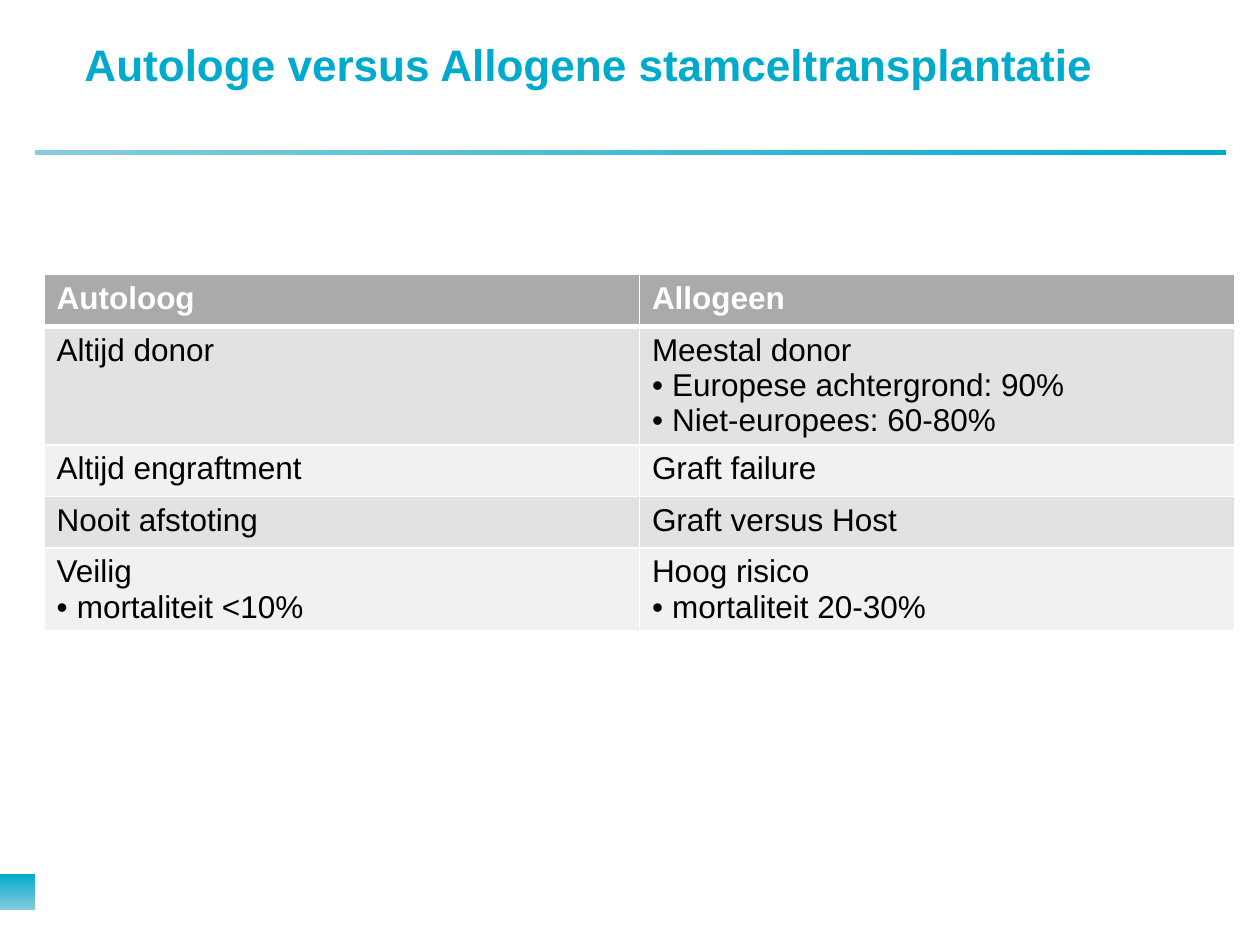
from lxml import etree
from pptx import Presentation
from pptx.dml.color import RGBColor
from pptx.enum import shapes, text
from pptx.oxml import ns
from pptx.util import Inches, Pt

CYAN = RGBColor(0x00, 0xAA, 0xCC)
PALE_CYAN = RGBColor(0x88, 0xCC, 0xDD)
WHITE = RGBColor(0xFF, 0xFF, 0xFF)
BLACK = RGBColor(0x00, 0x00, 0x00)
HEADER_GREY = RGBColor(0xAA, 0xAA, 0xAA)
BAND_GREYS = (RGBColor(0xF1, 0xF1, 0xF1), RGBColor(0xE2, 0xE2, 0xE2))

ROWS = [
    (["Autoloog"], ["Allogeen"]),
    (["Altijd donor"],
     ["Meestal donor", "Europese achtergrond: 90%", "Niet-europees: 60-80%"]),
    (["Altijd engraftment"], ["Graft failure"]),
    (["Nooit afstoting"], ["Graft versus Host"]),
    (["Veilig", "mortaliteit <10%"], ["Hoog risico", "mortaliteit 20-30%"]),
]
ROW_HEIGHTS = [0.41, 0.93, 0.41, 0.41, 0.65]


class SlideBuilder:
    font_name = "Arial"
    title_size = Pt(25.2)
    body_size = Pt(18)

    def __init__(self, page):
        self.page = page

    def style(self, para, size, color, bold):
        for span in para.runs:
            span.font.name = self.font_name
            span.font.size = size
            span.font.bold = bold
            span.font.color.rgb = color

    def title(self, wording, left, top, width, height):
        box = self.page.shapes.title
        box.left, box.top = Inches(left), Inches(top)
        box.width, box.height = Inches(width), Inches(height)
        frame = box.text_frame
        frame.margin_left = frame.margin_right = 0
        frame.margin_top = frame.margin_bottom = 0
        frame.vertical_anchor = text.MSO_ANCHOR.TOP
        frame.word_wrap = True
        frame.text = wording
        para = frame.paragraphs[0]
        para.alignment = text.PP_ALIGN.LEFT
        self.style(para, self.title_size, CYAN, True)

    def gradient_bar(self, left, top, width, height, angle):
        bar = self.page.shapes.add_shape(
            shapes.MSO_SHAPE.RECTANGLE,
            Inches(left), Inches(top), Inches(width), Inches(height))
        bar.shadow.inherit = False
        bar.line.fill.background()
        bar.fill.gradient()
        bar.fill.gradient_angle = angle
        for stop, color in zip(bar.fill.gradient_stops, (CYAN, PALE_CYAN)):
            stop.color.rgb = color

    def bullet(self, para):
        properties = para._p.get_or_add_pPr()
        properties.set("marL", str(Inches(0.16)))
        properties.set("indent", str(-Inches(0.16)))
        font = etree.SubElement(properties, ns.qn("a:buFont"))
        font.set("typeface", self.font_name)
        mark = etree.SubElement(properties, ns.qn("a:buChar"))
        mark.set("char", "•")

    def borders(self, cell, bottom_width):
        properties = cell._tc.get_or_add_tcPr()
        widths = {"lnL": 1, "lnR": 1, "lnT": 1, "lnB": bottom_width}
        for position, (side, width) in enumerate(widths.items()):
            line = etree.Element(ns.qn(f"a:{side}"), w=str(Pt(width)))
            fill = etree.SubElement(line, ns.qn("a:solidFill"))
            etree.SubElement(fill, ns.qn("a:srgbClr"), val=str(WHITE))
            properties.insert(position, line)

    def cell(self, cell, lines, fill, color, is_header):
        cell.fill.solid()
        cell.fill.fore_color.rgb = fill
        self.borders(cell, 3 if is_header else 1)
        cell.text_frame.text = "\n".join(lines)
        for number, para in enumerate(cell.text_frame.paragraphs):
            if number:
                self.bullet(para)
            self.style(para, self.body_size, color, is_header)

    def table(self, rows, heights, left, top, width):
        frame = self.page.shapes.add_table(
            len(rows), len(rows[0]), Inches(left), Inches(top),
            Inches(width), Inches(sum(heights)))
        grid = frame.table
        for index, (row, height) in enumerate(zip(rows, heights)):
            grid.rows[index].height = Inches(height)
            is_header = index == 0
            fill = HEADER_GREY if is_header else BAND_GREYS[index % 2]
            color = WHITE if is_header else BLACK
            for column, lines in enumerate(row):
                self.cell(grid.cell(index, column), lines, fill, color, is_header)


def main():
    deck = Presentation()
    deck.slide_width, deck.slide_height = Inches(10), Inches(7.5)
    builder = SlideBuilder(deck.slides.add_slide(deck.slide_layouts[5]))
    builder.gradient_bar(0, 6.94, 0.28, 0.28, 270)
    builder.gradient_bar(0.28, 1.19, 9.45, 0.04, 180)
    builder.title("Autologe versus Allogene stamceltransplantatie",
                  0.67, 0.3, 8.66, 0.89)
    builder.table(ROWS, ROW_HEIGHTS, 0.35, 2.18, 9.45)
    deck.save("out.pptx")


if __name__ == "__main__":
    main()
